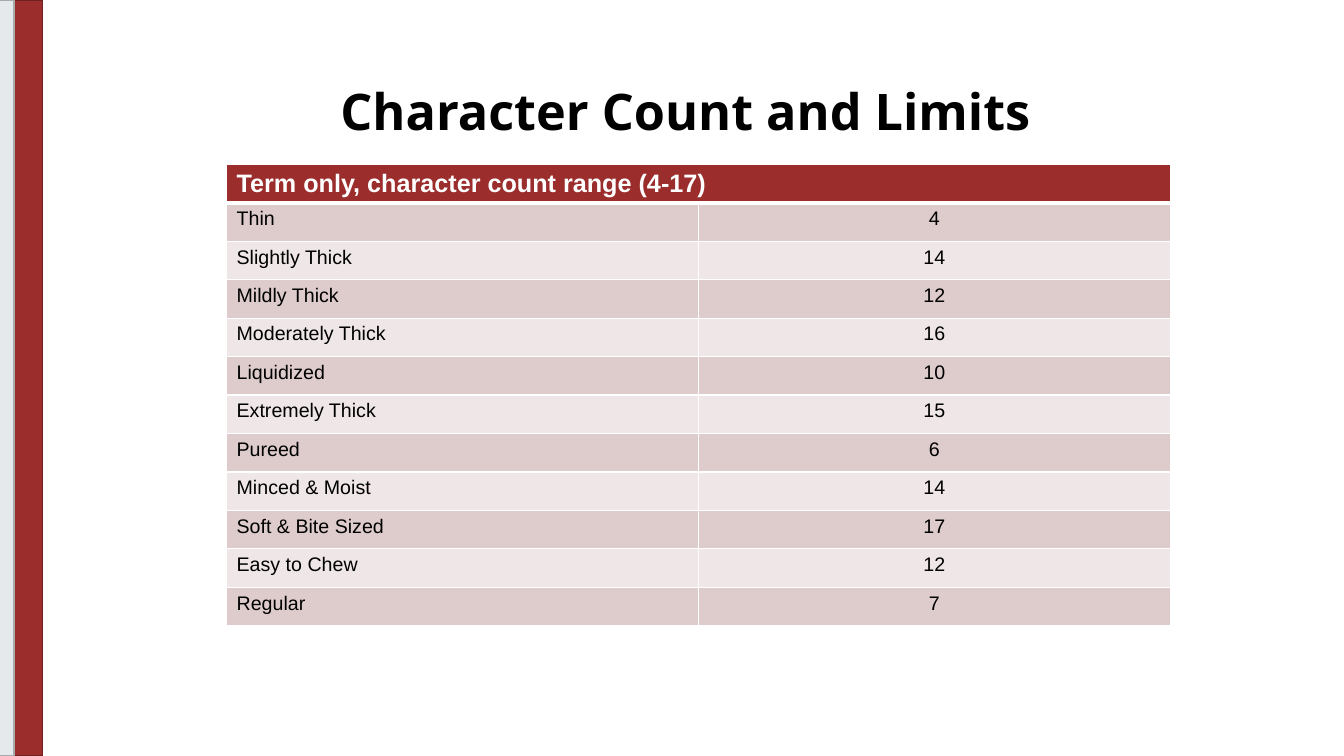
from lxml.etree import SubElement
from pptx import Presentation
from pptx.dml.color import RGBColor
from pptx.enum.shapes import MSO_SHAPE
from pptx.enum.text import MSO_ANCHOR, PP_ALIGN
from pptx.oxml.ns import qn
from pptx.util import Cm, Pt

RED, DARK_RED = "9B2D2D", "712020"
GRAY, DARK_GRAY = "E5E9EC", "A7AAAC"
BLACK, WHITE = "000000", "FFFFFF"
BANDS = ["DECCCC", "EFE7E7"]

HEADING = "Term only, character count range (4-17)"
TERM_COUNTS = [
    ("Thin", 4),
    ("Slightly Thick", 14),
    ("Mildly Thick", 12),
    ("Moderately Thick", 16),
    ("Liquidized", 10),
    ("Extremely Thick", 15),
    ("Pureed", 6),
    ("Minced & Moist", 14),
    ("Soft & Bite Sized", 17),
    ("Easy to Chew", 12),
    ("Regular", 7),
]


def color(value):
    return RGBColor.from_string(value)


def write_text(text_frame, text, size=14, font="Arial", fill=BLACK, bold=False,
               align=PP_ALIGN.LEFT, line_spacing=None):
    paragraph = text_frame.paragraphs[0]
    paragraph.alignment = align
    paragraph.line_spacing = line_spacing
    run = paragraph.add_run()
    run.text = text
    run.font.size = Pt(size)
    run.font.name = font
    run.font.bold = bold
    run.font.color.rgb = color(fill)


def set_borders(cell, top=1, bottom=1):
    """White cell borders, widths in points."""
    properties = cell._tc.get_or_add_tcPr()
    for side, width in (("L", 1), ("R", 1), ("T", top), ("B", bottom)):
        line = SubElement(properties, qn(f"a:ln{side}"), w=str(Pt(width)))
        fill = SubElement(line, qn("a:solidFill"))
        SubElement(fill, qn("a:srgbClr"), val=WHITE)


def add_bar(slide, left, width, height, fill, outline):
    bar = slide.shapes.add_shape(MSO_SHAPE.RECTANGLE, Cm(left), 0, Cm(width), height)
    bar.shadow.inherit = False
    bar.fill.solid()
    bar.fill.fore_color.rgb = color(fill)
    bar.line.color.rgb = color(outline)
    bar.line.width = Pt(1)


def add_side_bars(slide, height):
    add_bar(slide, 0, 1.07, height, RED, DARK_RED)
    add_bar(slide, -0.08, 0.43, height, GRAY, DARK_GRAY)


def add_title(slide, left, top, width, height):
    title = slide.shapes.title
    title.left, title.top, title.width, title.height = left, top, width, height
    title.text_frame.word_wrap = True
    title.text_frame.vertical_anchor = MSO_ANCHOR.MIDDLE
    write_text(title.text_frame, "Character Count and Limits", size=36,
               font="Open Sans", bold=True, align=PP_ALIGN.CENTER, line_spacing=0.9)


def add_count_table(slide, left, top, width, height):
    row_total = len(TERM_COUNTS) + 1
    table = slide.shapes.add_table(row_total, 2, left, top, width, height).table

    # Heading across both columns
    heading = table.cell(0, 0)
    heading.merge(table.cell(0, 1))
    write_text(heading.text_frame, HEADING, size=18, fill=WHITE, bold=True)

    # One row per term
    for row, (term, count) in enumerate(TERM_COUNTS, start=1):
        write_text(table.cell(row, 0).text_frame, term)
        write_text(table.cell(row, 1).text_frame, str(count), align=PP_ALIGN.CENTER)

    # Borders and banded fills
    for row in range(row_total):
        for column in range(2):
            cell = table.cell(row, column)
            set_borders(cell, top=3 if row == 1 else 1, bottom=3 if row == 0 else 1)
            cell.fill.solid()
            cell.fill.fore_color.rgb = color(BANDS[(row - 1) % 2] if row else RED)


def main():
    presentation = Presentation()
    presentation.slide_width = Cm(33.87)
    presentation.slide_height = Cm(19.05)
    slide = presentation.slides.add_slide(presentation.slide_layouts[5])
    add_side_bars(slide, presentation.slide_height)
    add_title(slide, Cm(1.78), Cm(1.04), Cm(30.99), Cm(3.68))
    add_count_table(slide, Cm(5.71), Cm(4.14), Cm(23.78), Cm(11.63))
    presentation.save("out.pptx")


if __name__ == "__main__":
    main()
